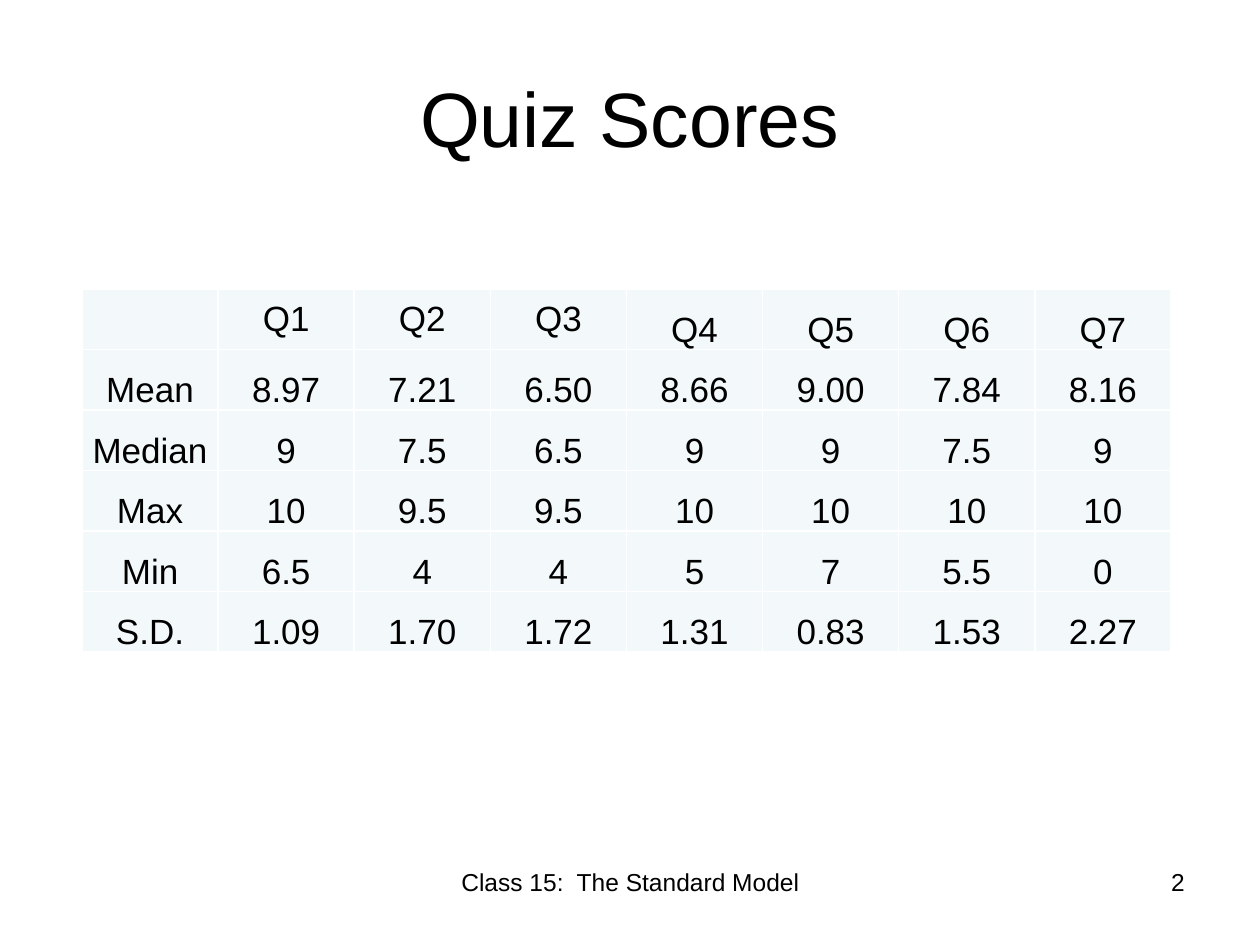
import pptx
import pptx.dml.color
import pptx.enum.text
import pptx.oxml
import pptx.oxml.ns
import pptx.util

PX = 914400 / 126  # EMU in one px
FONT = "Arial"
BLACK = pptx.dml.color.RGBColor(0x00, 0x00, 0x00)
WHITE = pptx.dml.color.RGBColor(0xFF, 0xFF, 0xFF)
PALE = pptx.dml.color.RGBColor(0xF3, 0xF9, 0xFA)
ALIGN = pptx.enum.text.PP_ALIGN
ANCHOR = pptx.enum.text.MSO_ANCHOR

SCORES = [
    ["", "Q1", "Q2", "Q3", "Q4", "Q5", "Q6", "Q7"],
    ["Mean", "8.97", "7.21", "6.50", "8.66", "9.00", "7.84", "8.16"],
    ["Median", "9", "7.5", "6.5", "9", "9", "7.5", "9"],
    ["Max", "10", "9.5", "9.5", "10", "10", "10", "10"],
    ["Min", "6.5", "4", "4", "5", "7", "5.5", "0"],
    ["S.D.", "1.09", "1.70", "1.72", "1.31", "0.83", "1.53", "2.27"],
]


def emu(px):
    return pptx.util.Emu(round(px * PX))


def write(frame, text, size, align):
    paragraph = frame.paragraphs[0]
    paragraph.alignment = align
    run = paragraph.add_run()
    run.text = text
    run.font.name = FONT
    run.font.size = pptx.util.Pt(size)
    run.font.color.rgb = BLACK


def add_border(cell):
    properties = cell._tc.get_or_add_tcPr()
    for index, side in enumerate(("lnL", "lnR", "lnT", "lnB")):
        line = pptx.oxml.parse_xml(
            f'<a:{side} {pptx.oxml.ns.nsdecls("a")} w="12700"><a:solidFill>'
            f'<a:srgbClr val="{WHITE}"/></a:solidFill></a:{side}>')
        properties.insert(index, line)


def place_title(slide, x, y, w, h):
    title = slide.shapes.title
    title.left, title.top, title.width, title.height = map(emu, (x, y, w, h))
    title.text_frame.vertical_anchor = ANCHOR.MIDDLE
    write(title.text_frame, "Quiz Scores", 44, ALIGN.CENTER)


def place_scores(slide, x, y, w, h):
    rows, columns = len(SCORES), len(SCORES[0])
    scores = slide.shapes.add_table(rows, columns, *map(emu, (x, y, w, h))).table
    scores.first_row = scores.horz_banding = False
    for column in scores.columns:
        column.width = emu(w / columns)
    for row in scores.rows:
        row.height = emu(h / rows)
    for r, values in enumerate(SCORES):
        for c, value in enumerate(values):
            cell = scores.cell(r, c)
            cell.fill.solid()
            cell.fill.fore_color.rgb = PALE
            add_border(cell)
            cell.margin_left = cell.margin_right = cell.margin_top = emu(1)
            cell.margin_bottom = 0
            # The first three quiz headings sit mid-cell, the rest at the bottom
            cell.vertical_anchor = ANCHOR.MIDDLE if r == 0 and c <= 3 else ANCHOR.BOTTOM
            if value:
                write(cell.text_frame, value, 20, ALIGN.CENTER)


def place_footer_text(slide, text, align, x, y, w, h):
    footer = slide.shapes.add_textbox(*map(emu, (x, y, w, h)))
    footer.text_frame.word_wrap = True
    write(footer.text_frame, text, 14, align)


def main():
    deck = pptx.Presentation()
    deck.slide_width, deck.slide_height = emu(1260), emu(945)
    slide = deck.slides.add_slide(deck.slide_layouts[5])

    # Heading
    place_title(slide, 63, 38, 1134, 158)
    # Quiz statistics
    place_scores(slide, 82, 289, 1089, 363)
    # Class name and page number
    place_footer_text(slide, "Class 15:  The Standard Model", ALIGN.CENTER, 431, 861, 399, 66)
    place_footer_text(slide, "2", ALIGN.RIGHT, 903, 861, 294, 66)

    deck.save("out.pptx")


if __name__ == "__main__":
    main()
